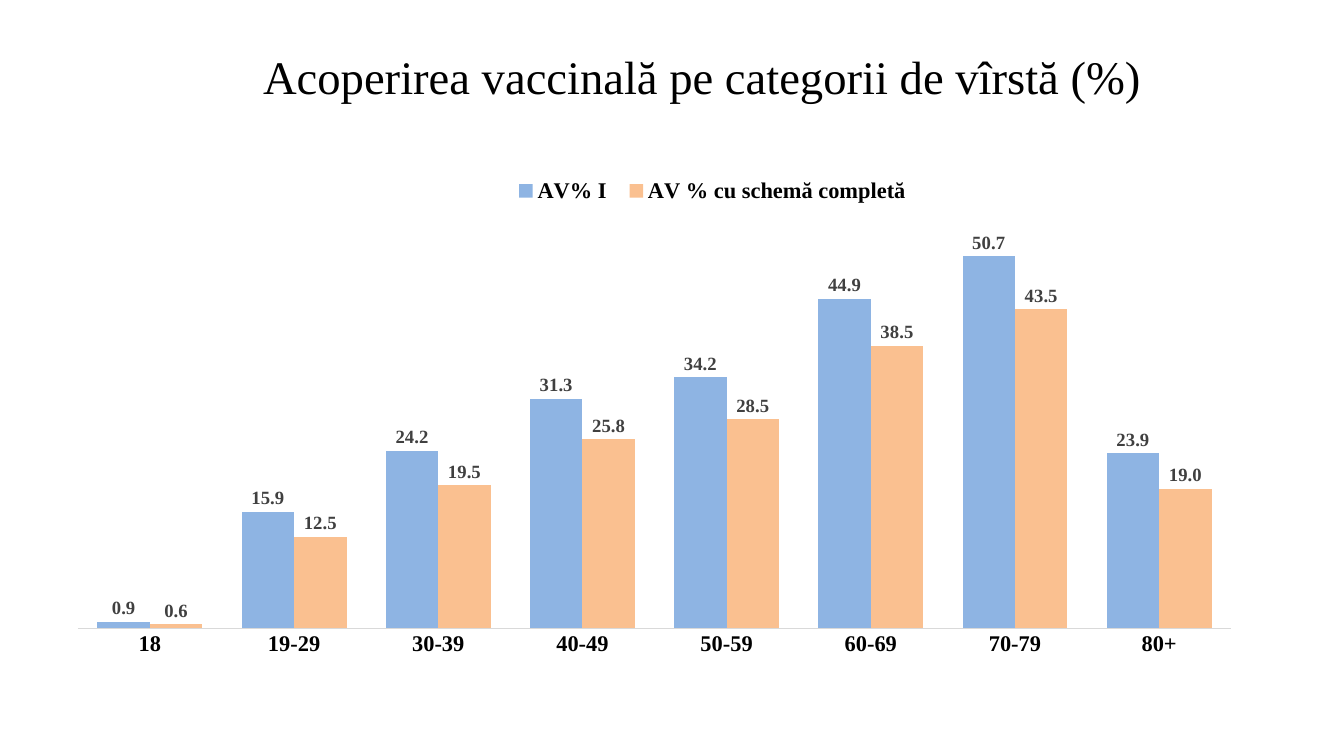
"""Build a slide with a column chart of vaccination coverage by age group."""
import pptx
import pptx.chart.data
import pptx.dml.color
import pptx.enum.chart
import pptx.enum.text
import pptx.oxml
import pptx.oxml.ns
import pptx.util

Pt = pptx.util.Pt
RGBColor = pptx.dml.color.RGBColor

TITLE = "Acoperirea vaccinală pe categorii de vîrstă (%)"
AGE_GROUPS = ["18", "19-29", "30-39", "40-49", "50-59", "60-69", "70-79", "80+"]
BLUE = RGBColor(0x8E, 0xB4, 0xE3)
ORANGE = RGBColor(0xFA, 0xC0, 0x90)
BLACK = RGBColor(0, 0, 0)
DARK_GREY = RGBColor(0x40, 0x40, 0x40)
LIGHT_GREY = RGBColor(0xD9, 0xD9, 0xD9)
SERIES = [
    ("AV% I", BLUE, [0.9, 15.9, 24.2, 31.3, 34.2, 44.9, 50.7, 23.9]),
    ("AV % cu schemă completă", ORANGE, [0.6, 12.5, 19.5, 25.8, 28.5, 38.5, 43.5, 19.0]),
]
SLIDE_SIZE = (1440, 810)
TITLE_BOX = (275.76, 51.12, 954, 60.48)
CHART_BOX = (54, 171.36, 1278, 552.24)
PLOT_LAYOUT = (0.023, 0.054, 0.967, 0.855)
LEGEND_LAYOUT = (0.38, 0.03, 0.35, 0.06)
SERIF = "Times New Roman"
NUMBER_FORMAT = "0.0"


def set_font(font, size, color, bold=None, name=SERIF):
    font.name = name
    font.size = Pt(size)
    font.bold = bold
    font.color.rgb = color


def layout_xml(box, inner=False):
    target = '<c:layoutTarget val="inner"/>' if inner else ""
    modes = '<c:xMode val="edge"/><c:yMode val="edge"/>'
    sizes = "".join(f'<c:{tag} val="{value}"/>' for tag, value in zip("xywh", box))
    return pptx.oxml.parse_xml(
        f'<c:layout {pptx.oxml.ns.nsdecls("c")}>'
        f"<c:manualLayout>{target}{modes}{sizes}</c:manualLayout></c:layout>"
    )


def remove_layout(element):
    for layout in element.xpath("./c:layout"):
        element.remove(layout)


def add_title(slide):
    title = slide.shapes.title
    title.left, title.top, title.width, title.height = map(Pt, TITLE_BOX)
    frame = title.text_frame
    frame.text = TITLE
    frame.word_wrap = True
    frame.auto_size = pptx.enum.text.MSO_AUTO_SIZE.NONE
    frame.vertical_anchor = pptx.enum.text.MSO_ANCHOR.TOP
    frame.margin_left = frame.margin_right = frame.margin_top = frame.margin_bottom = 0
    paragraph = frame.paragraphs[0]
    paragraph.alignment = pptx.enum.text.PP_ALIGN.CENTER
    paragraph.line_spacing = Pt(60)
    set_font(paragraph.font, 50, BLACK)


def add_coverage_chart(slide):
    data = pptx.chart.data.CategoryChartData(number_format=NUMBER_FORMAT)
    data.categories = AGE_GROUPS
    for name, _, values in SERIES:
        data.add_series(name, values)
    chart_type = pptx.enum.chart.XL_CHART_TYPE.COLUMN_CLUSTERED
    chart = slide.shapes.add_chart(chart_type, *map(Pt, CHART_BOX), data).chart
    chart.has_title = False
    set_font(chart.font, 10, BLACK, name="Calibri")
    format_axes(chart)
    format_columns(chart.plots[0])
    format_legend(chart)
    plot_area = chart._chartSpace.xpath("c:chart/c:plotArea")[0]
    remove_layout(plot_area)
    plot_area.insert(0, layout_xml(PLOT_LAYOUT, inner=True))


def format_axes(chart):
    value_axis = chart.value_axis
    value_axis.visible = False
    value_axis.has_major_gridlines = False
    value_axis.minimum_scale = 0
    value_axis.maximum_scale = 60
    category_axis = chart.category_axis
    category_axis.major_tick_mark = pptx.enum.chart.XL_TICK_MARK.NONE
    category_axis.format.line.color.rgb = LIGHT_GREY
    category_axis.format.line.width = Pt(0.75)
    set_font(category_axis.tick_labels.font, 24, BLACK, True)


def format_columns(plot):
    plot.gap_width = 75
    plot.overlap = 0
    plot.vary_by_categories = False
    for series, (_, color, _) in zip(plot.series, SERIES):
        series.format.fill.solid()
        series.format.fill.fore_color.rgb = color
        labels = series.data_labels
        labels.show_value = True
        labels.number_format = NUMBER_FORMAT
        labels.number_format_is_linked = False
        labels.position = pptx.enum.chart.XL_LABEL_POSITION.OUTSIDE_END
        set_font(labels.font, 20, DARK_GREY, True)


def format_legend(chart):
    chart.has_legend = True
    legend = chart.legend
    legend.position = pptx.enum.chart.XL_LEGEND_POSITION.BOTTOM
    legend.include_in_layout = False
    set_font(legend.font, 24, BLACK, True)
    remove_layout(legend._element)
    legend._element.xpath("./c:legendPos")[0].addnext(layout_xml(LEGEND_LAYOUT))


def main():
    presentation = pptx.Presentation()
    presentation.slide_width, presentation.slide_height = map(Pt, SLIDE_SIZE)
    slide = presentation.slides.add_slide(presentation.slide_layouts.get_by_name("Title Only"))
    add_title(slide)
    add_coverage_chart(slide)
    presentation.save("out.pptx")


if __name__ == "__main__":
    main()
